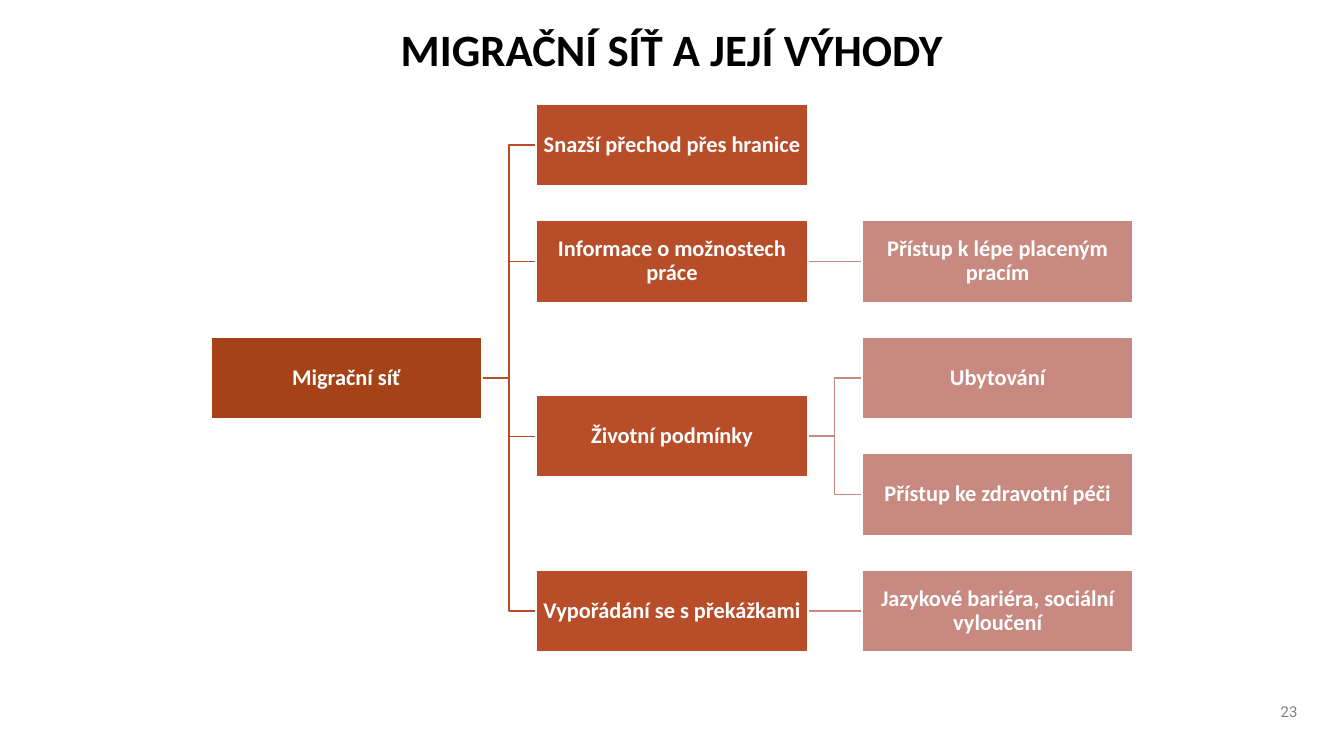
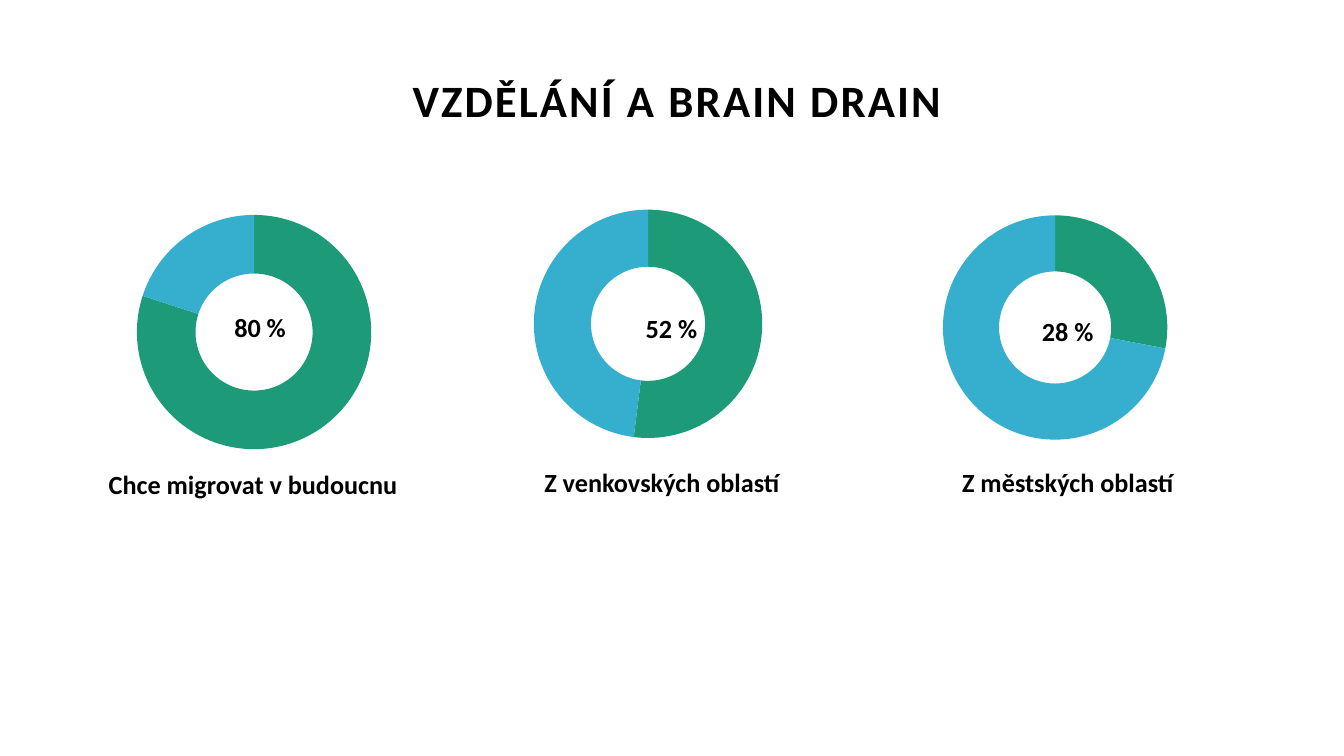
"""Build two slides: a migration network tree and three doughnut charts on education."""
import pptx
import pptx.chart.data
import pptx.dml.color
import pptx.enum.chart
import pptx.enum.shapes
import pptx.enum.text
import pptx.oxml
import pptx.oxml.ns
import pptx.util
from pptx.util import Inches

BLACK = pptx.dml.color.RGBColor(0x00, 0x00, 0x00)
WHITE = pptx.dml.color.RGBColor(0xFF, 0xFF, 0xFF)
GREY = pptx.dml.color.RGBColor(0x80, 0x80, 0x80)
GREEN = pptx.dml.color.RGBColor(0x1D, 0x9A, 0x78)
BLUE = pptx.dml.color.RGBColor(0x36, 0xAF, 0xCE)
LEVEL_COLORS = (
    pptx.dml.color.RGBColor(0xA6, 0x42, 0x17),
    pptx.dml.color.RGBColor(0xB8, 0x4E, 0x29),
    pptx.dml.color.RGBColor(0xC8, 0x8A, 0x80),
)
FONT = "Calibri"
NUMBER_FONT = "Roboto"
TOP = pptx.enum.text.MSO_ANCHOR.TOP
MIDDLE = pptx.enum.text.MSO_ANCHOR.MIDDLE
OVAL = pptx.enum.shapes.MSO_SHAPE.OVAL
ROUNDED = pptx.enum.shapes.MSO_SHAPE.ROUNDED_RECTANGLE

TREE_LEFT, TREE_TOP = 2.09, 1.03
NODE_WIDTH, NODE_HEIGHT = 2.69, 0.82
COLUMN_STEP, ROW_STEP = 3.23, 1.155
RIGHT_SITE, LEFT_SITE = 3, 1
BACK = 2

NETWORK = ("Migrační síť", 2, [
    ("Snazší přechod přes hranice", 0, []),
    ("Informace o možnostech práce", 1, [("Přístup k lépe placeným pracím", 1, [])]),
    ("Životní podmínky", 2.5, [
        ("Ubytování", 2, []),
        ("Přístup ke zdravotní péči", 3, []),
    ]),
    ("Vypořádání se s překážkami", 4, [("Jazykové bariéra, sociální vyloučení", 4, [])]),
])

DOUGHNUTS = [
    (80, (1.22, 1.78, 2.6, 3.03), None, (1.95, 2.78, 1.26, 0.92),
     "Chce migrovat v budoucnu", (0.87, 4.63, 3.28, 0.35), ROUNDED),
    (52, (4.94, 1.79, 2.73, 2.79), (0.13, 0.08, 0.83, 0.86), (5.92, 2.79, 1.48, 0.92),
     "Z venkovských oblastí", (4.83, 4.61, 3.47, 0.35), ROUNDED),
    (28, (9.18, 1.66, 2.65, 3.18), (0.06, 0.15, 0.85, 0.7), (9.95, 2.82, 1.28, 0.92),
     "Z městských oblastí", (8.85, 4.63, 3.48, 0.31), None),
]


def write_text(shape, text, size, color, bold=True, anchor=TOP, inset=0, name=FONT, line_spacing=1):
    frame = shape.text_frame
    frame.word_wrap = True
    frame.vertical_anchor = anchor
    frame.margin_left = frame.margin_right = Inches(inset)
    frame.margin_top = frame.margin_bottom = Inches(inset)
    para = frame.paragraphs[0]
    para.text = text
    para.alignment = pptx.enum.text.PP_ALIGN.CENTER
    para.line_spacing = line_spacing
    para.font.name = name
    para.font.size = pptx.util.Pt(size)
    para.font.bold = bold
    para.font.color.rgb = color
    return para


def add_label(page, place, text, size=18.7, color=BLACK, preset=None, **style):
    if preset is None:
        box = page.shapes.add_textbox(*map(Inches, place))
    else:
        box = page.shapes.add_shape(preset, *map(Inches, place))
        box.shadow.inherit = False
        box.fill.background()
        box.line.fill.background()
    return write_text(box, text, size, color, **style)


def add_title(page, text, left, top, spacing=0):
    para = add_label(page, (left, top, 11.93, 0.33), text, size=32, line_spacing=0.9)
    if spacing:
        para.runs[0]._r.get_or_add_rPr().set("spc", str(int(spacing * 100)))


def add_node(page, text, level, row):
    node = page.shapes.add_shape(
        pptx.enum.shapes.MSO_SHAPE.RECTANGLE,
        Inches(TREE_LEFT + level * COLUMN_STEP), Inches(TREE_TOP + row * ROW_STEP),
        Inches(NODE_WIDTH), Inches(NODE_HEIGHT))
    node.shadow.inherit = False
    node.fill.solid()
    node.fill.fore_color.rgb = LEVEL_COLORS[level]
    node.line.color.rgb = WHITE
    node.line.width = pptx.util.Pt(1.5)
    write_text(node, text, 16, WHITE, anchor=MIDDLE, inset=0.01, line_spacing=0.9)
    return node


def link_nodes(page, parent, child, color):
    kinds = pptx.enum.shapes.MSO_CONNECTOR
    kind = kinds.STRAIGHT if parent.top == child.top else kinds.ELBOW
    link = page.shapes.add_connector(kind, 0, 0, 0, 0)
    link.begin_connect(parent, RIGHT_SITE)
    link.end_connect(child, LEFT_SITE)
    link.line.color.rgb = color
    link.line.width = pptx.util.Pt(1)
    link._element.spPr.append(pptx.oxml.parse_xml(
        f"<a:effectLst {pptx.oxml.ns.nsdecls('a')}/>"))
    page.shapes._spTree.insert(BACK, link._element)


def add_tree(page, branch, level=0):
    text, row, children = branch
    node = add_node(page, text, level, row)
    for child in children:
        link_nodes(page, node, add_tree(page, child, level + 1), LEVEL_COLORS[level + 1])
    return node


def set_plot_layout(chart, plot_place):
    area = chart._chartSpace.chart.plotArea
    for old in area.findall(pptx.oxml.ns.qn("c:layout")):
        area.remove(old)
    values = "".join(f'<c:{key} val="{value}"/>' for key, value in zip("xywh", plot_place))
    area.insert(0, pptx.oxml.parse_xml(
        f"<c:layout {pptx.oxml.ns.nsdecls('c')}><c:manualLayout>"
        '<c:layoutTarget val="inner"/><c:xMode val="edge"/><c:yMode val="edge"/>'
        f"{values}</c:manualLayout></c:layout>"))


def add_doughnut(page, share, place, plot_place):
    data = pptx.chart.data.CategoryChartData()
    data.categories = ["1", "2"]
    data.add_series("Series 1", (share, 100 - share))
    chart = page.shapes.add_chart(
        pptx.enum.chart.XL_CHART_TYPE.DOUGHNUT, *map(Inches, place), data).chart
    chart.has_legend = False
    chart.has_title = False
    chart.font.name = FONT
    chart.font.size = pptx.util.Pt(18)
    chart.font.color.rgb = BLACK
    plot = chart.plots[0]
    plot.vary_by_categories = True
    plot._element.find(pptx.oxml.ns.qn("c:holeSize")).set("val", "64")
    for index, color in enumerate((GREEN, BLUE)):
        point = plot.series[0].points[index]
        point.format.fill.solid()
        point.format.fill.fore_color.rgb = color
        point.format.line.fill.background()
    if plot_place:
        set_plot_layout(chart, plot_place)


def build_network(page):
    add_label(page, (12.55, 6.84, 0.47, 0.43), "23", size=10.7, color=GREY,
              bold=False, anchor=MIDDLE, name=NUMBER_FONT)
    add_tree(page, NETWORK)
    add_title(page, "MIGRAČNÍ SÍŤ A JEJÍ VÝHODY", 0.7, 0.28)


def build_education(page):
    add_title(page, "VZDĚLÁNÍ A BRAIN DRAIN", 0.75, 0.78, spacing=1.5)
    for share, place, plot_place, share_place, caption, caption_place, preset in DOUGHNUTS:
        add_doughnut(page, share, place, plot_place)
        add_label(page, share_place, f"{share} %", preset=OVAL, anchor=MIDDLE)
        add_label(page, caption_place, caption, preset=preset)


def main():
    deck = pptx.Presentation()
    deck.slide_width, deck.slide_height = Inches(13.33), Inches(7.5)
    for build in (build_network, build_education):
        build(deck.slides.add_slide(deck.slide_layouts[6]))
    deck.save("out.pptx")


if __name__ == "__main__":
    main()
